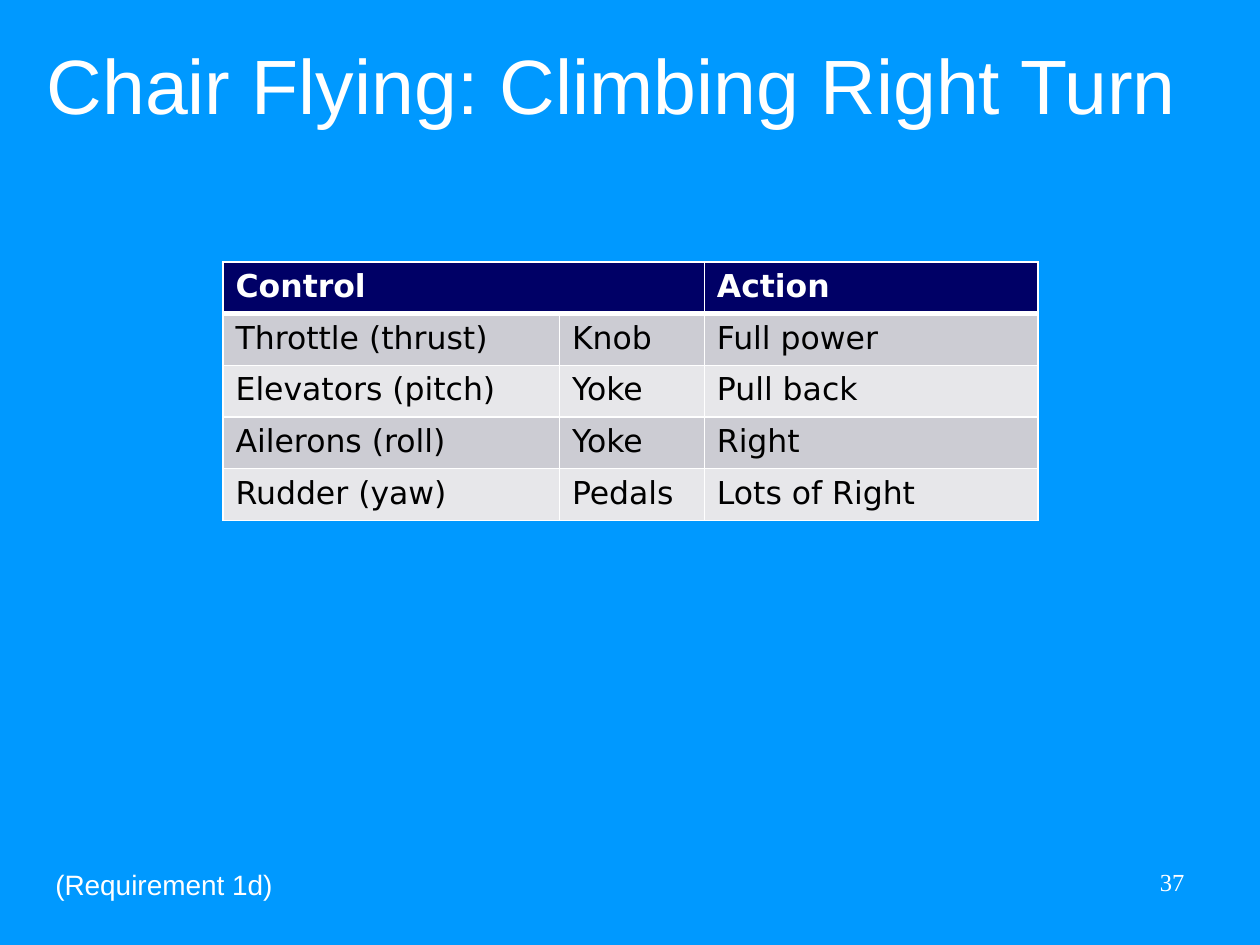
import pptx
import pptx.dml.color
import pptx.enum.text
import pptx.oxml.ns
import pptx.util
from lxml import etree
from pptx.util import Inches

ANCHOR = pptx.enum.text.MSO_ANCHOR
ALIGN = pptx.enum.text.PP_ALIGN
AUTO_SIZE = pptx.enum.text.MSO_AUTO_SIZE


def color(hex_code):
    return pptx.dml.color.RGBColor.from_string(hex_code)


class SlideBuilder:
    background, white, black, navy = "0099FF", "FFFFFF", "000000", "000066"
    bands = ("CCCCD3", "E7E7EA")
    heading_font, table_font, number_font = "Arial", "DejaVu Sans", "Times New Roman"

    def __init__(self, presentation):
        self.slide = presentation.slides.add_slide(presentation.slide_layouts[5])
        fill = self.slide.background.fill
        fill.solid()
        fill.fore_color.rgb = color(self.background)

    def set_words(self, frame, words, size, font, ink, align=ALIGN.LEFT, bold=False):
        frame.text = words
        paragraph = frame.paragraphs[0]
        paragraph.alignment = align
        style = paragraph.runs[0].font
        style.size = pptx.util.Pt(size)
        style.name = font
        style.bold = bold
        style.color.rgb = color(ink)

    def title(self, words, left, top, width, height):
        heading = self.slide.shapes.title
        heading.left, heading.top = Inches(left), Inches(top)
        heading.width, heading.height = Inches(width), Inches(height)
        frame = heading.text_frame
        frame.auto_size = AUTO_SIZE.NONE
        frame.vertical_anchor = ANCHOR.BOTTOM
        self.set_words(frame, words, 44, self.heading_font, self.white)

    def label(self, words, left, top, width, height, size, font,
              align=ALIGN.LEFT, anchor=ANCHOR.TOP, wrap=True):
        frame = self.slide.shapes.add_textbox(
            Inches(left), Inches(top), Inches(width), Inches(height)).text_frame
        frame.word_wrap = wrap
        frame.auto_size = AUTO_SIZE.NONE if wrap else AUTO_SIZE.SHAPE_TO_FIT_TEXT
        frame.vertical_anchor = anchor
        self.set_words(frame, words, size, font, self.white, align)

    def borders(self, cell, top, bottom):
        properties = cell._tc.get_or_add_tcPr()
        for side, points in (("L", 1), ("R", 1), ("T", top), ("B", bottom)):
            line = etree.SubElement(properties, pptx.oxml.ns.qn("a:ln" + side),
                                    w=str(pptx.util.Pt(points)))
            solid = etree.SubElement(line, pptx.oxml.ns.qn("a:solidFill"))
            etree.SubElement(solid, pptx.oxml.ns.qn("a:srgbClr"), val=self.white)

    def table(self, rows, left, top, column_widths, row_height):
        grid = self.slide.shapes.add_table(
            len(rows), len(column_widths), Inches(left), Inches(top),
            Inches(sum(column_widths)), Inches(row_height * len(rows))).table
        for column, width in zip(grid.columns, column_widths):
            column.width = Inches(width)
        for row_index, row in enumerate(rows):
            header = row_index == 0
            fill = self.navy if header else self.bands[(row_index - 1) % 2]
            ink = self.white if header else self.black
            for column_index, words in enumerate(row):
                cell = grid.cell(row_index, column_index)
                self.borders(cell, 3 if row_index == 1 else 1, 3 if header else 1)
                cell.fill.solid()
                cell.fill.fore_color.rgb = color(fill)
                if words:
                    self.set_words(cell.text_frame, words, 18, self.table_font, ink,
                                   bold=header)
        grid.cell(0, 0).merge(grid.cell(0, 1))


def main():
    presentation = pptx.Presentation()
    presentation.slide_width, presentation.slide_height = Inches(10), Inches(7.5)
    builder = SlideBuilder(presentation)
    builder.title("Chair Flying: Climbing Right Turn", 0.27, 0.13, 9.45, 0.95)
    builder.label("37", 7.17, 6.83, 2.33, 0.52, 14, builder.number_font, ALIGN.RIGHT)
    builder.label("(Requirement 1d)", 0.34, 6.83, 1.95, 0.37, 16, builder.heading_font,
                  anchor=ANCHOR.MIDDLE, wrap=False)
    control_actions = [
        ("Control", "", "Action"),
        ("Throttle (thrust)", "Knob", "Full power"),
        ("Elevators (pitch)", "Yoke", "Pull back"),
        ("Ailerons (roll)", "Yoke", "Right"),
        ("Rudder (yaw)", "Pedals", "Lots of Right"),
    ]
    builder.table(control_actions, 1.77, 2.08, (2.67, 1.15, 2.65), 0.41)
    presentation.save("out.pptx")


if __name__ == "__main__":
    main()
